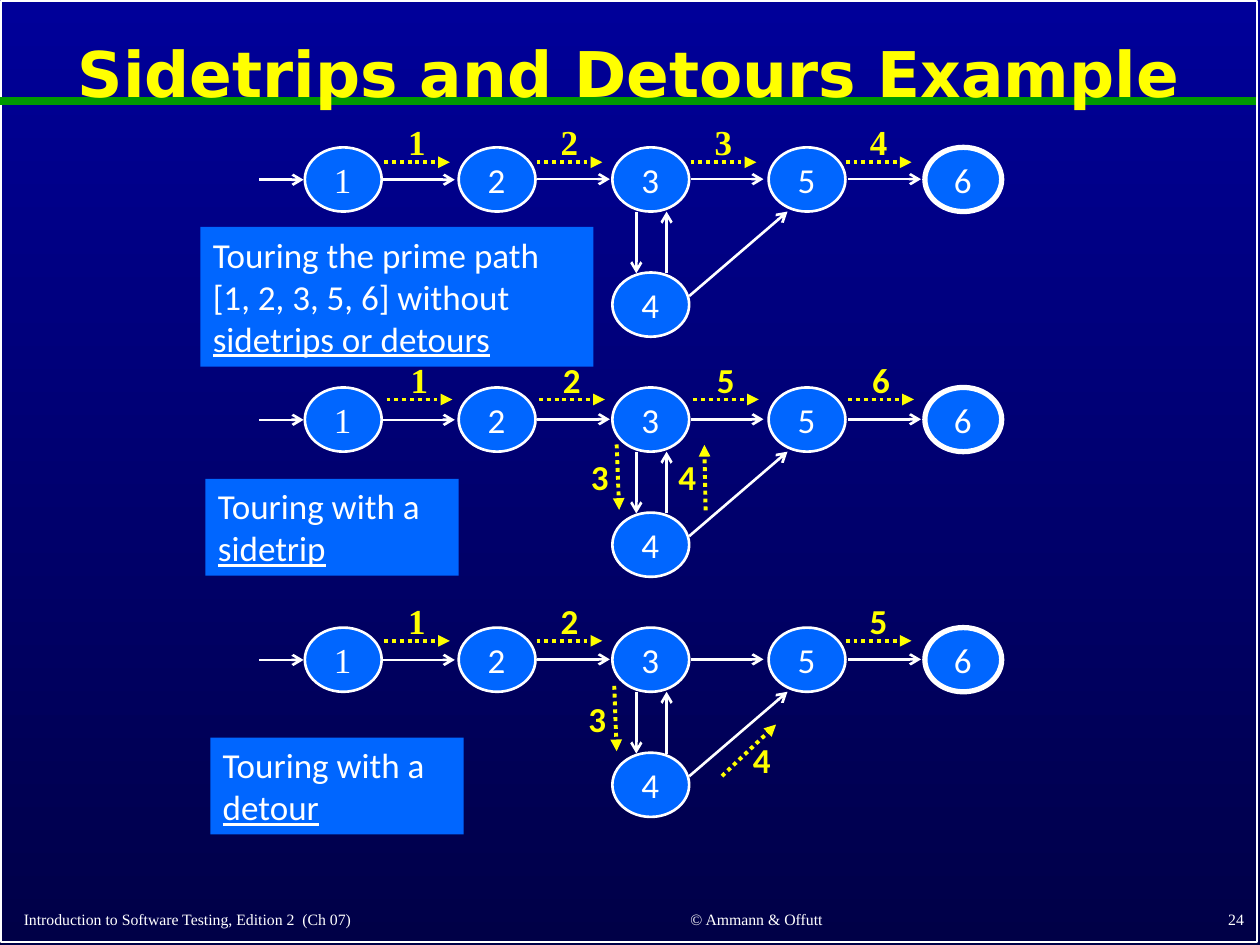
from lxml.etree import SubElement
from pptx import Presentation
from pptx.dml.color import RGBColor
from pptx.enum.dml import MSO_LINE
from pptx.enum.shapes import MSO_CONNECTOR, MSO_SHAPE
from pptx.enum.text import MSO_ANCHOR, PP_ALIGN
from pptx.oxml.ns import qn
from pptx.util import Pt

COLORS = {
    "top": "000099", "bottom": "000047", "rule": "009900",
    "node": "0066FF", "white": "FFFFFF", "tour": "FFFF00",
}
SERIF, SANS, TITLE_FONT = "Times New Roman", "Calibri", "DejaVu Sans"

# The graph, measured from the top of its first row
NODE_WIDTH, NODE_HEIGHT = 43.9, 36.7
NODES = {"1": (174.2, 0), "2": (262.1, 0), "3": (349.9, 0),
         "4": (349.9, 71.5), "5": (439.2, 0), "6": (528.5, 0)}
EDGES = [
    ((148.3, 18.5), (173.5, 18.5)),
    ((218.2, 18.5), (259.9, 18.5)),
    ((306.7, 18.2), (348.5, 18.2)),
    ((394.6, 18.2), (436.3, 18.2)),
    ((484.6, 18.2), (526.3, 18.2)),
    ((363.6, 36.7), (363.6, 72)),
    ((380.9, 72), (380.9, 36.7)),
    ((393.8, 85), (450, 36.7)),
]

# Tour steps, measured from the tour origin: start, end, label corner
STEPS = {
    "3-4": ((351, 25.7), (352.4, 63.1), (327.3, 28.6)),
    "4-3": ((401.8, 63.3), (401.1, 25.9), (377.3, 28.7)),
    "4-5": ((412.6, 77.3), (443.5, 47.8), (421.2, 52.1)),
}
for edge, left in {"1-2": 219.5, "2-3": 306.6, "3-5": 394.6, "5-6": 483.3}.items():
    STEPS[edge] = ((left, 0), (left + 37.6, 0), (left + 4.7, -27.1))

# Each example: tour origin, edges in visiting order, serif labels, caption
EXAMPLES = [
    {"origin": (0, 92.7), "tour": ["1-2", "2-3", "3-5", "5-6"], "serif": 4,
     "caption": ("Touring the prime path [1, 2, 3, 5, 6] without ", "sidetrips or detours"),
     "box": (114.5, 129.6, 224.6, 79.9)},
    {"origin": (1.4, 228.3), "tour": ["1-2", "2-3", "3-4", "4-3", "3-5", "5-6"], "serif": 1,
     "caption": ("Touring with a ", "sidetrip"), "box": (117.4, 273.6, 144.7, 55.4)},
    {"origin": (0, 366.2), "tour": ["1-2", "2-3", "3-4", "4-5", "5-6"], "serif": 1,
     "caption": ("Touring with a ", "detour"), "box": (120.2, 421.5, 144.7, 55.4)},
]
FIRST_ROW, ROW_PITCH = 84.2, 137.2


def rgb(name):
    return RGBColor.from_string(COLORS[name])


def add_text(para, text, font=SANS, size=20, color="white", bold=False,
             underline=False, align=PP_ALIGN.LEFT):
    para.alignment = align
    span = para.add_run()
    span.text = text
    span.font.name = font
    span.font.size = Pt(size)
    span.font.color.rgb = rgb(color)
    span.font.bold = bold
    span.font.underline = underline


class GraphSlide:
    def __init__(self, deck):
        self.page = deck.slides.add_slide(deck.slide_layouts[5])
        fill = self.page.background.fill
        fill.gradient()
        fill.gradient_angle = 270
        for stop, name, position in zip(fill.gradient_stops, ("top", "bottom"), (0, 1)):
            stop.color.rgb = rgb(name)
            stop.position = position

    def title(self, text, *bounds):
        box = self.page.shapes.title
        box.left, box.top, box.width, box.height = map(Pt, bounds)
        box.text_frame.word_wrap = True
        box.text_frame.vertical_anchor = MSO_ANCHOR.MIDDLE
        para = box.text_frame.paragraphs[0]
        para.line_spacing = 0.9
        add_text(para, text, font=TITLE_FONT, size=36, color="tour", bold=True,
                 align=PP_ALIGN.CENTER)
        box.element.getparent().append(box.element)  # in front of the rule

    def shape(self, kind, *bounds, fill=None, outline=None, width=1.5):
        shape = self.page.shapes.add_shape(kind, *map(Pt, bounds))
        shape.shadow.inherit = False
        if fill:
            shape.fill.solid()
            shape.fill.fore_color.rgb = rgb(fill)
        else:
            shape.fill.background()
        if outline:
            shape.line.color.rgb = rgb(outline)
            shape.line.width = Pt(width)
        else:
            shape.line.fill.background()
        return shape

    def text(self, text, *bounds, wrap=False, anchor=MSO_ANCHOR.TOP, **style):
        box = self.page.shapes.add_textbox(*map(Pt, bounds))
        box.text_frame.word_wrap = wrap
        box.text_frame.vertical_anchor = anchor
        add_text(box.text_frame.paragraphs[0], text, **style)

    def line(self, start, end, color="white", width=1.5, arrow=None, dash=None):
        line = self.page.shapes.add_connector(
            MSO_CONNECTOR.STRAIGHT, *map(Pt, (*start, *end)))
        line.line.color.rgb = rgb(color)
        line.line.width = Pt(width)
        if dash:
            line.line.dash_style = dash
        properties = line.element.spPr
        if arrow:
            SubElement(properties.find(qn("a:ln")), qn("a:tailEnd"), type=arrow)
        SubElement(properties, qn("a:effectLst"))

    def node(self, name, left, top):
        self.shape(MSO_SHAPE.OVAL, left, top, NODE_WIDTH, NODE_HEIGHT,
                   fill="node", outline="white", width=3 if name == "6" else 1.5)
        self.text(name, left + 9.4, top + 2.9, 24.5, 31.7,
                  font=SERIF if name == "1" else SANS, align=PP_ALIGN.CENTER)

    def graph(self, top):
        for name, (left, drop) in NODES.items():
            self.node(name, left, top + drop)
        for (x1, y1), (x2, y2) in EDGES:
            self.line((x1, top + y1), (x2, top + y2), arrow="arrow")

    def tour(self, origin, edges, serif):
        for number, edge in enumerate(edges, 1):
            start, end, label = [(origin[0] + x, origin[1] + y) for x, y in STEPS[edge]]
            self.line(start, end, color="tour", width=2.25, arrow="triangle",
                      dash=MSO_LINE.ROUND_DOT)
            self.text(str(number), *label, 28.1, 31, wrap=True, bold=True, color="tour",
                      font=SERIF if number <= serif else SANS, align=PP_ALIGN.CENTER)

    def caption(self, words, bounds):
        frame = self.shape(MSO_SHAPE.RECTANGLE, *bounds, fill="node").text_frame
        frame.word_wrap = True
        frame.vertical_anchor = MSO_ANCHOR.TOP
        plain, underlined = words
        add_text(frame.paragraphs[0], plain)
        add_text(frame.paragraphs[0], underlined, underline=True)


def main():
    deck = Presentation()
    deck.slide_width, deck.slide_height = Pt(720), Pt(540)
    slide = GraphSlide(deck)

    # Frame, rule and title
    slide.shape(MSO_SHAPE.RECTANGLE, 0.7, 0.7, 717.8, 537.8, outline="white", width=1)
    slide.line((0, 57.6), (717.8, 57.6), color="rule", width=4.5)
    slide.title("Sidetrips and Detours Example", 6.5, 7.9, 705.6, 72)

    # Footer
    footers = [
        ("Introduction to Software Testing, Edition 2  (Ch 07)", 6.5, 296.6, PP_ALIGN.LEFT),
        ("© Ammann & Offutt", 318.2, 228.2, PP_ALIGN.CENTER),
        ("24", 568.1, 149.8, PP_ALIGN.RIGHT),
    ]
    for text, left, width, align in footers:
        slide.text(text, left, 512, width, 22.3, wrap=True, anchor=MSO_ANCHOR.BOTTOM,
                   font=SERIF, size=9, align=align)

    # Three tours of the same graph
    for row, example in enumerate(EXAMPLES):
        slide.graph(FIRST_ROW + row * ROW_PITCH)
        slide.caption(example["caption"], example["box"])
        slide.tour(example["origin"], example["tour"], example["serif"])

    deck.save("out.pptx")


if __name__ == "__main__":
    main()
